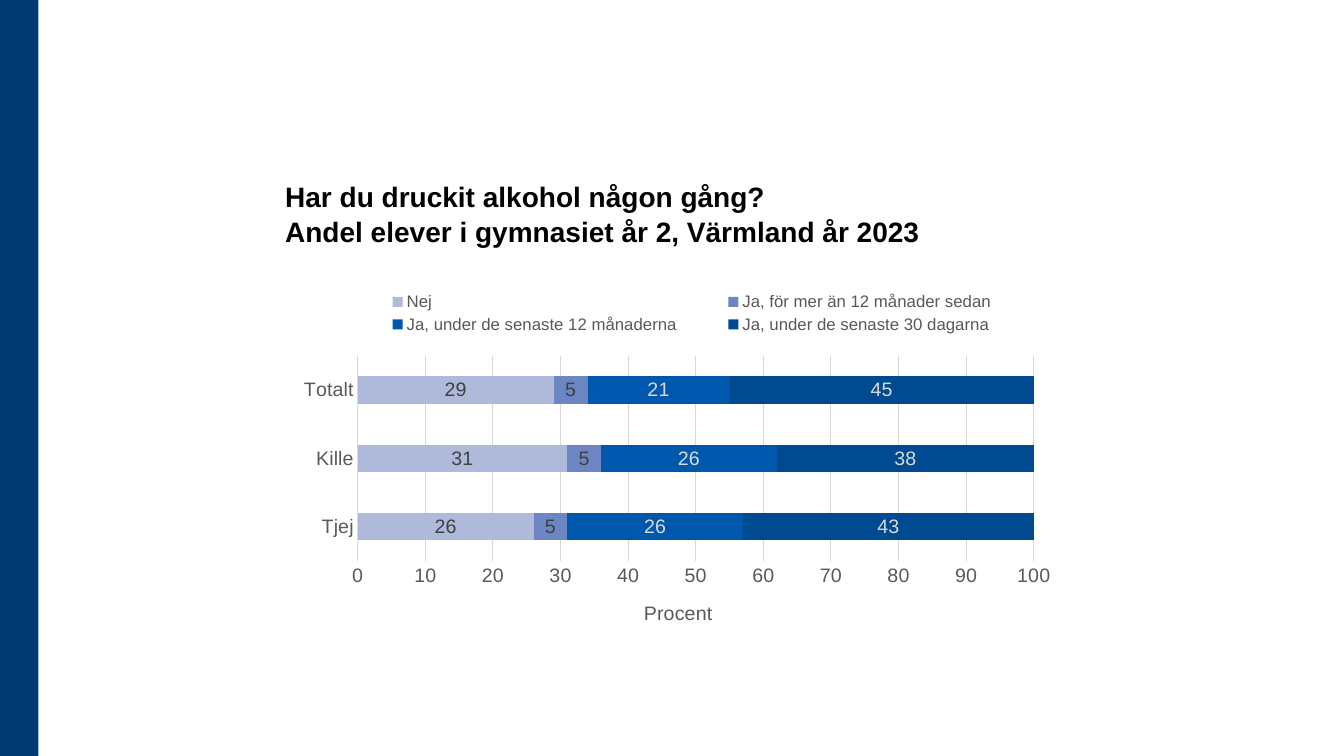
"""Build a slide with a stacked bar chart of alcohol use among pupils."""
from lxml.etree import SubElement
from pptx import Presentation
from pptx.chart.data import CategoryChartData
from pptx.dml.color import RGBColor
from pptx.enum.chart import XL_CHART_TYPE as ChartType, XL_LABEL_POSITION as LabelPosition
from pptx.enum.chart import XL_LEGEND_POSITION as LegendPosition, XL_TICK_MARK as TickMark
from pptx.enum.shapes import MSO_SHAPE as Shape
from pptx.enum.text import MSO_ANCHOR as Anchor
from pptx.oxml.ns import qn
from pptx.util import Inches, Pt

TITLE = ["Har du druckit alkohol någon gång?", "Andel elever i gymnasiet år 2, Värmland år 2023"]
AXIS_TITLE = "Procent"
CATEGORIES = ["Tjej", "Kille", "Totalt"]
SERIES = [
    ("Nej", (26, 31, 29), "pale", "dark_label"),
    ("Ja, för mer än 12 månader sedan", (5, 5, 5), "soft", "dark_label"),
    ("Ja, under de senaste 12 månaderna", (26, 26, 21), "blue", "light"),
    ("Ja, under de senaste 30 dagarna", (43, 38, 45), "deep", "light"),
]
COLORS = {
    "band": "003A70", "title": "000000", "text": "595959", "light": "D9D9D9",
    "dark_label": "404040", "pale": "AFB9DA", "soft": "6C86C4", "blue": "0058AC", "deep": "004A91",
}
FONT = "Arial"
PLOT_LAYOUT = {"x": 0.104, "y": 0.23, "w": 0.852, "h": 0.577}
LEGEND_LAYOUT = {"x": 0.09, "y": 0.04, "w": 0.87, "h": 0.14}
AXIS_TITLE_LAYOUT = {"x": 0.46, "y": 0.91}


def color(name):
    """Return the named colour."""
    return RGBColor.from_string(COLORS[name])


def style_font(font, size, name, bold=False):
    """Set the typeface, size, colour and weight of a font."""
    font.name, font.size, font.bold = FONT, Pt(size), bold
    font.color.rgb = color(name)


def style_line(line):
    """Give a line the thin light grey look."""
    line.color.rgb = color("light")
    line.width = Pt(0.75)


def place(part, layout, inner=False):
    """Fix a chart part at fractions of the chart area."""
    for old in part.findall(qn("c:layout")):
        part.remove(old)
    holder = SubElement(part, qn("c:layout"))
    manual = SubElement(holder, qn("c:manualLayout"))
    if inner:
        SubElement(manual, qn("c:layoutTarget")).set("val", "inner")
    for key in ("x", "y"):
        SubElement(manual, qn(f"c:{key}Mode")).set("val", "edge")
    for key, value in layout.items():
        SubElement(manual, qn(f"c:{key}")).set("val", str(value))
    overlay = part.find(qn("c:overlay"))
    if overlay is None:
        part.insert(0, holder)
    else:
        overlay.addprevious(holder)


def add_band(page, height):
    """Draw the blue band along the left edge."""
    band = page.shapes.add_shape(Shape.RECTANGLE, 0, 0, Inches(0.38), height)
    band.shadow.inherit = False
    band.fill.solid()
    band.fill.fore_color.rgb = color("band")
    band.line.fill.background()


def add_title(page):
    """Write the two-line heading."""
    box = page.shapes.add_textbox(Inches(2.73), Inches(1.06), Inches(8.04), Inches(1.45))
    frame = box.text_frame
    frame.word_wrap = True
    frame.vertical_anchor = Anchor.BOTTOM
    para = frame.paragraphs[0]
    para.line_spacing = 1.05
    for index, text in enumerate(TITLE):
        if index:
            para.add_line_break()
        span = para.add_run()
        span.text = text
        style_font(span.font, 20, "title", True)


def style_axes(chart):
    """Format both axes and the value axis title."""
    category, value = chart.category_axis, chart.value_axis
    for axis in (category, value):
        axis.major_tick_mark = axis.minor_tick_mark = TickMark.NONE
        style_font(axis.tick_labels.font, 14, "text")
    category.has_major_gridlines = False
    style_line(category.format.line)
    value.minimum_scale, value.maximum_scale, value.major_unit = 0, 100, 10
    value.tick_labels.number_format = "0"
    value.tick_labels.number_format_is_linked = False
    value.format.line.fill.background()
    value.has_major_gridlines = True
    style_line(value.major_gridlines.format.line)
    span = value.axis_title.text_frame.paragraphs[0].add_run()
    span.text = AXIS_TITLE
    style_font(span.font, 14, "text")


def style_series(plot):
    """Colour the bars and their value labels."""
    for series, (_, _, fill, label) in zip(plot.series, SERIES):
        series.format.fill.solid()
        series.format.fill.fore_color.rgb = color(fill)
        series.invert_if_negative = False
        labels = series.data_labels
        labels.show_value = True
        labels.position = LabelPosition.CENTER
        labels.number_format, labels.number_format_is_linked = "0", False
        style_font(labels.font, 14, label)


def add_bars(page):
    """Add the stacked bar chart."""
    data = CategoryChartData(number_format="0")
    data.categories = CATEGORIES
    for name, values, _, _ in SERIES:
        data.add_series(name, values)
    chart = page.shapes.add_chart(
        ChartType.BAR_STACKED, Inches(2.73), Inches(2.72), Inches(7.87), Inches(3.54), data
    ).chart
    style_font(chart.font, 14, "title")
    chart.has_title = False
    chart.has_legend = True
    chart.legend.position = LegendPosition.TOP
    chart.legend.include_in_layout = False
    style_font(chart.legend.font, 12, "text")
    plot = chart.plots[0]
    plot.gap_width, plot.overlap, plot.vary_by_categories = 150, 100, False
    style_series(plot)
    style_axes(chart)
    root = chart.element
    place(root.xpath(".//c:plotArea")[0], PLOT_LAYOUT, True)
    place(root.xpath(".//c:legend")[0], LEGEND_LAYOUT)
    place(root.xpath(".//c:valAx/c:title")[0], AXIS_TITLE_LAYOUT)


def main():
    """Create the deck and save it."""
    deck = Presentation()
    deck.slide_width, deck.slide_height = Inches(13.33), Inches(7.5)
    page = deck.slides.add_slide(deck.slide_layouts[6])
    add_band(page, deck.slide_height)
    add_title(page)
    add_bars(page)
    deck.save("out.pptx")


if __name__ == "__main__":
    main()
